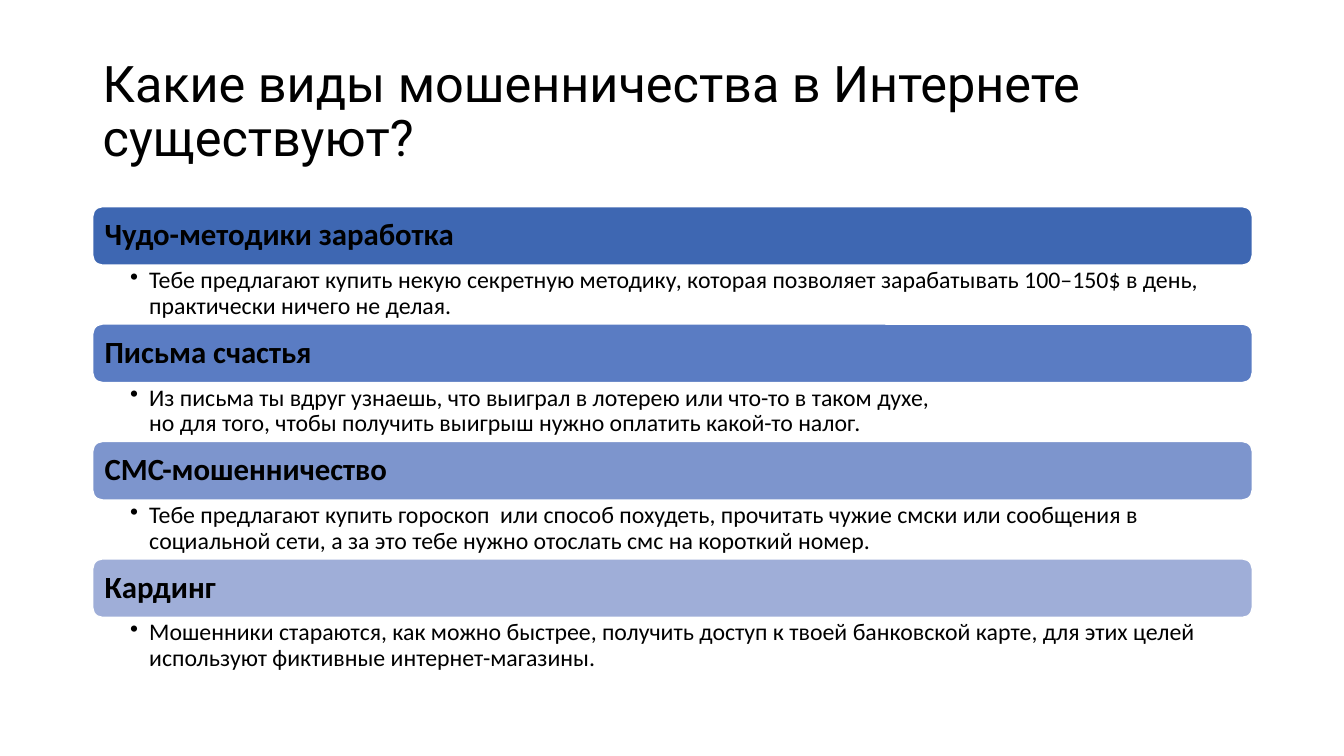
import pptx
import pptx.dml.color
import pptx.enum.shapes
import pptx.enum.text
import pptx.oxml.ns
import pptx.util
from lxml import etree

Inches = pptx.util.Inches
MIDDLE = pptx.enum.text.MSO_ANCHOR.MIDDLE
TOP = pptx.enum.text.MSO_ANCHOR.TOP

LEFT, WIDTH = 0.92, 11.5
FIRST_ROW, ROW_STEP = 2.05, 1.165
BAR_HEIGHT, DETAIL_HEIGHT = 0.58, 0.59
BULLET_INDENT = 0.19

TITLE = "Какие виды мошенничества в Интернете\nсуществуют?"
FRAUDS = [
    ("Чудо-методики заработка", "3E67B2",
     "Тебе предлагают купить некую секретную методику, которая позволяет "
     "зарабатывать 100–150$ в день, практически ничего не делая."),
    ("Письма счастья", "5A7CC3",
     "Из письма ты вдруг узнаешь, что выиграл в лотерею или что-то в таком духе,\n"
     "но для того, чтобы получить выигрыш нужно оплатить какой-то налог."),
    ("СМС-мошенничество", "7D95CD",
     "Тебе предлагают купить гороскоп  или способ похудеть, прочитать чужие смски "
     "или сообщения в социальной сети, а за это тебе нужно отослать смс на "
     "короткий номер."),
    ("Кардинг", "9FAED8",
     "Мошенники стараются, как можно быстрее, получить доступ к твоей банковской "
     "карте, для этих целей используют фиктивные интернет-магазины."),
]


def color(hex_value):
    return pptx.dml.color.RGBColor.from_string(hex_value)


def add_bullet(paragraph):
    properties = paragraph._p.get_or_add_pPr()
    properties.set("marL", str(Inches(BULLET_INDENT)))
    properties.set("indent", str(-Inches(BULLET_INDENT)))
    bullet = etree.SubElement(properties, pptx.oxml.ns.qn("a:buChar"))
    bullet.set("char", "•")


def write(shape, text, size, font="Calibri", bold=False, anchor=MIDDLE,
          insets=(0.1, 0.05, 0.1, 0.05), bulleted=False):
    """Fill a shape with one left-aligned paragraph; insets run left, top, right, bottom."""
    frame = shape.text_frame
    frame.word_wrap = True
    frame.vertical_anchor = anchor
    (frame.margin_left, frame.margin_top,
     frame.margin_right, frame.margin_bottom) = map(Inches, insets)
    paragraph = frame.paragraphs[0]
    paragraph.text = text
    paragraph.alignment = pptx.enum.text.PP_ALIGN.LEFT
    paragraph.line_spacing = 0.9
    if bulleted:
        add_bullet(paragraph)
    paragraph.font.name = font
    paragraph.font.size = pptx.util.Pt(size)
    paragraph.font.bold = bold
    paragraph.font.color.rgb = color("000000")


def add_text(slide, top, height, text, size, **style):
    box = slide.shapes.add_textbox(
        Inches(LEFT), Inches(top), Inches(WIDTH), Inches(height))
    write(box, text, size, **style)


def add_bar(slide, top, heading, fill):
    bar = slide.shapes.add_shape(
        pptx.enum.shapes.MSO_SHAPE.ROUNDED_RECTANGLE,
        Inches(LEFT), Inches(top), Inches(WIDTH), Inches(BAR_HEIGHT))
    bar.shadow.inherit = False
    bar.fill.solid()
    bar.fill.fore_color.rgb = color(fill)
    bar.line.color.rgb = color("FFFFFF")
    bar.line.width = pptx.util.Pt(1)
    # The rounded corners already inset the text by about 0.03 inches.
    write(bar, heading, 22, bold=True, insets=(0.09, 0.09, 0.09, 0.09))


def main():
    presentation = pptx.Presentation()
    presentation.slide_width = Inches(13.33)
    presentation.slide_height = Inches(7.5)
    slide = presentation.slides.add_slide(presentation.slide_layouts[6])

    add_text(slide, 0.4, 1.45, TITLE, 36, font="Roboto")
    for row, (heading, fill, detail) in enumerate(FRAUDS):
        top = FIRST_ROW + row * ROW_STEP
        add_bar(slide, top, heading, fill)
        add_text(slide, top + BAR_HEIGHT, DETAIL_HEIGHT, detail, 17, anchor=TOP,
                 insets=(0.37, 0.03, 0.17, 0.03), bulleted=True)

    presentation.save("out.pptx")


if __name__ == "__main__":
    main()
